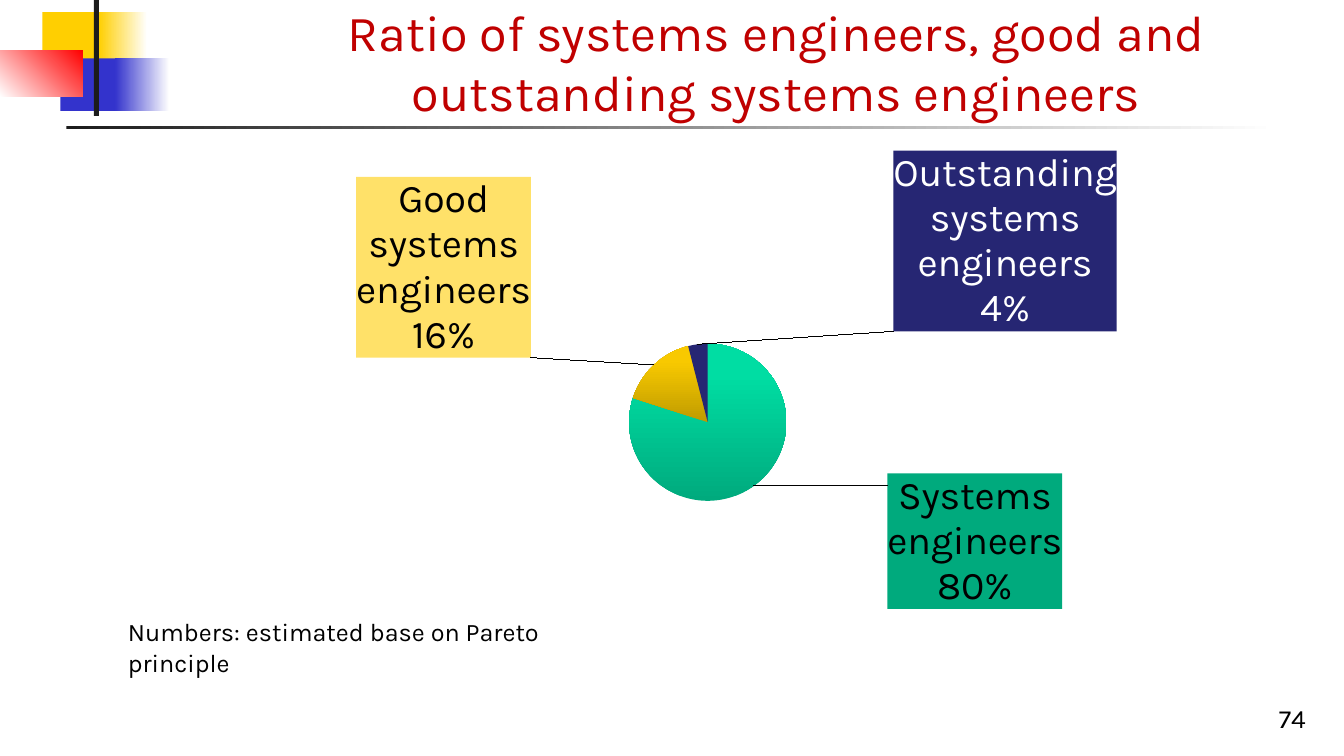
from copy import deepcopy
from dataclasses import dataclass

from lxml.etree import SubElement
from pptx import Presentation
from pptx.chart.data import CategoryChartData
from pptx.dml.color import RGBColor
from pptx.dml.fill import FillFormat
from pptx.enum.chart import XL_CHART_TYPE, XL_LABEL_POSITION
from pptx.enum.shapes import MSO_SHAPE
from pptx.enum.text import MSO_ANCHOR, MSO_AUTO_SIZE, PP_ALIGN
from pptx.oxml.ns import qn
from pptx.oxml.xmlchemy import BaseOxmlElement
from pptx.text.text import TextFrame
from pptx.util import Inches, Pt

FONT = "Karla"
COLORS = {
    "white": "FFFFFF", "black": "000000", "ink": "1C1C1C", "title": "C00000",
    "yellow": "FFCF01", "blue": "3333CC", "red": "FF0000", "navy": "262673",
    "green": "00AA7D", "mint": "00DDA3", "aqua": "00DEA4",
    "ochre": "BF9B00", "gold": "F8C900", "amber": "F9CA00", "cream": "FFE169",
}


@dataclass
class Block:
    box: tuple[float, float, float, float]
    tones: tuple[str, ...]
    angle: int = 0


@dataclass
class Slice:
    name: str
    value: int
    tones: tuple[str, ...]
    back: str
    ink: str
    shift: tuple[float, float]  # label offset in inches


BLOCKS = [
    Block((0.42, 0.12, 0.64, 0.52), ("yellow",)),
    Block((0.98, 0.12, 0.48, 0.52), ("yellow", "white")),
    Block((0.6, 0.58, 0.62, 0.52), ("blue",)),
    Block((1.14, 0.58, 0.54, 0.52), ("blue", "white")),
    Block((0, 0.5, 0.82, 0.46), ("white", "red"), 45),
    Block((0.93, 0, 0.05, 1.15), ("ink",)),
    Block((0.66, 1.25, 12, 0.03), ("ink", "white")),
]
SLICES = [
    Slice("Systems engineers", 80, ("green", "mint", "aqua"),
          "green", "black", (1.29, -0.17)),
    Slice("Good systems engineers", 16, ("ochre", "gold", "amber"),
          "cream", "black", (-1.18, -0.03)),
    Slice("Outstanding systems engineers", 4, ("navy",),
          "navy", "white", (4.16, -0.07)),
]
CHART = (1.02, 1.43, 11.89, 4.88)
PIE = (6.24, 3.41, 1.56, 1.56)


def rgb(name: str) -> RGBColor:
    return RGBColor.from_string(COLORS[name])


def inches(box: tuple[float, ...]) -> list[Inches]:
    return [Inches(part) for part in box]


def paint(fill: FillFormat, root: BaseOxmlElement,
          tones: tuple[str, ...], angle: int) -> None:
    if len(tones) == 1:
        fill.solid()
        fill.fore_color.rgb = rgb(tones[0])
        return
    fill.gradient()
    fill.gradient_angle = angle
    if len(tones) == 3:
        last = list(root.iter(qn("a:gs")))[-1]
        mid = deepcopy(last)
        mid.set("pos", "80000")
        last.addprevious(mid)
    for stop, tone in zip(fill.gradient_stops, tones):
        stop.color.rgb = rgb(tone)


def write(frame: TextFrame, text: str, size: float, ink: str,
          align: PP_ALIGN, anchor: MSO_ANCHOR) -> None:
    looks = {"word_wrap": True, "auto_size": MSO_AUTO_SIZE.NONE,
             "vertical_anchor": anchor}
    for key, value in looks.items():
        setattr(frame, key, value)
    para = frame.paragraphs[0]
    para.alignment = align
    run = para.add_run()
    run.text = text
    run.font.name, run.font.size = FONT, Pt(size)
    run.font.color.rgb = rgb(ink)


def place(parent: BaseOxmlElement, values: dict[str, object]) -> None:
    """Fill a chart layout element with manual settings."""
    for old in list(parent):
        parent.remove(old)
    manual = SubElement(parent, qn("c:manualLayout"))
    for key, value in values.items():
        SubElement(manual, qn(f"c:{key}")).set("val", str(value))


prs = Presentation()
prs.slide_width, prs.slide_height = Inches(13.33), Inches(7.5)
slide = prs.slides.add_slide(prs.slide_layouts[5])
shapes = slide.shapes

# Corner blocks and rule
for block in BLOCKS:
    shape = shapes.add_shape(MSO_SHAPE.RECTANGLE, *inches(block.box))
    shape.shadow.inherit = False
    shape.line.fill.background()
    paint(shape.fill, shape.element, block.tones, block.angle)

# Title
title = shapes.title
title.left, title.top, title.width, title.height = inches((2.07, 0.34, 11.26, 0.92))
write(title.text_frame, "Ratio of systems engineers, good and outstanding systems engineers",
      36, "title", PP_ALIGN.CENTER, MSO_ANCHOR.BOTTOM)

# Pie chart
data = CategoryChartData()
data.categories = [part.name for part in SLICES]
data.add_series("Series 1", [part.value for part in SLICES])
chart = shapes.add_chart(XL_CHART_TYPE.PIE, *inches(CHART), data).chart
chart.has_legend = chart.has_title = False
chart.font.name, chart.font.size = FONT, Pt(28)
chart.font.color.rgb = rgb("black")
plot = chart.plots[0]
plot.vary_by_categories = True
area = chart.element.find(".//" + qn("c:plotArea"))
layout = area.find(qn("c:layout"))
if layout is None:
    layout = area.makeelement(qn("c:layout"))
    area.insert(0, layout)
left, top, width, height = CHART
place(layout, {
    "layoutTarget": "inner", "xMode": "edge", "yMode": "edge",
    "x": round((PIE[0] - left) / width, 4), "y": round((PIE[1] - top) / height, 4),
    "w": round(PIE[2] / width, 4), "h": round(PIE[3] / height, 4),
})

# Slices and their labels
for spot, part in enumerate(SLICES):
    point = plot.series[0].points[spot]
    point.format.line.fill.background()
    node = [item for item in chart.element.iter(qn("c:dPt"))][spot]
    paint(point.format.fill, node, part.tones, 90)
    label = point.data_label
    label.font.name, label.font.size = FONT, Pt(28)
    label.font.color.rgb = rgb(part.ink)
    label.position = XL_LABEL_POSITION.OUTSIDE_END
    tag = [item for item in chart.element.iter(qn("c:dLbl"))][spot]
    for key, flag in {"showVal": 0, "showCatName": 1, "showPercent": 1}.items():
        tag.find(qn(f"c:{key}")).set("val", str(flag))
    SubElement(tag, qn("c:separator")).text = "\n"
    spot_box = tag.makeelement(qn("c:layout"))
    tag.find(qn("c:idx")).addnext(spot_box)
    place(spot_box, {"x": round(part.shift[0] / width, 4),
                     "y": round(part.shift[1] / height, 4)})
    props = tag.find(qn("c:spPr"))
    if props is None:
        props = tag.makeelement(qn("c:spPr"))
        tag.find(qn("c:txPr")).addprevious(props)
    solid = SubElement(props, qn("a:solidFill"))
    SubElement(solid, qn("a:srgbClr")).set("val", COLORS[part.back])

# Slide number and note
number = shapes.add_textbox(*inches((10.27, 6.83, 2.78, 0.5)))
write(number.text_frame, "74", 18.7, "black", PP_ALIGN.RIGHT, MSO_ANCHOR.BOTTOM)
note = shapes.add_textbox(*inches((1.17, 6.07, 5.21, 0.4)))
write(note.text_frame, "Numbers: estimated base on Pareto principle",
      18, "black", PP_ALIGN.LEFT, MSO_ANCHOR.TOP)

prs.save("out.pptx")
